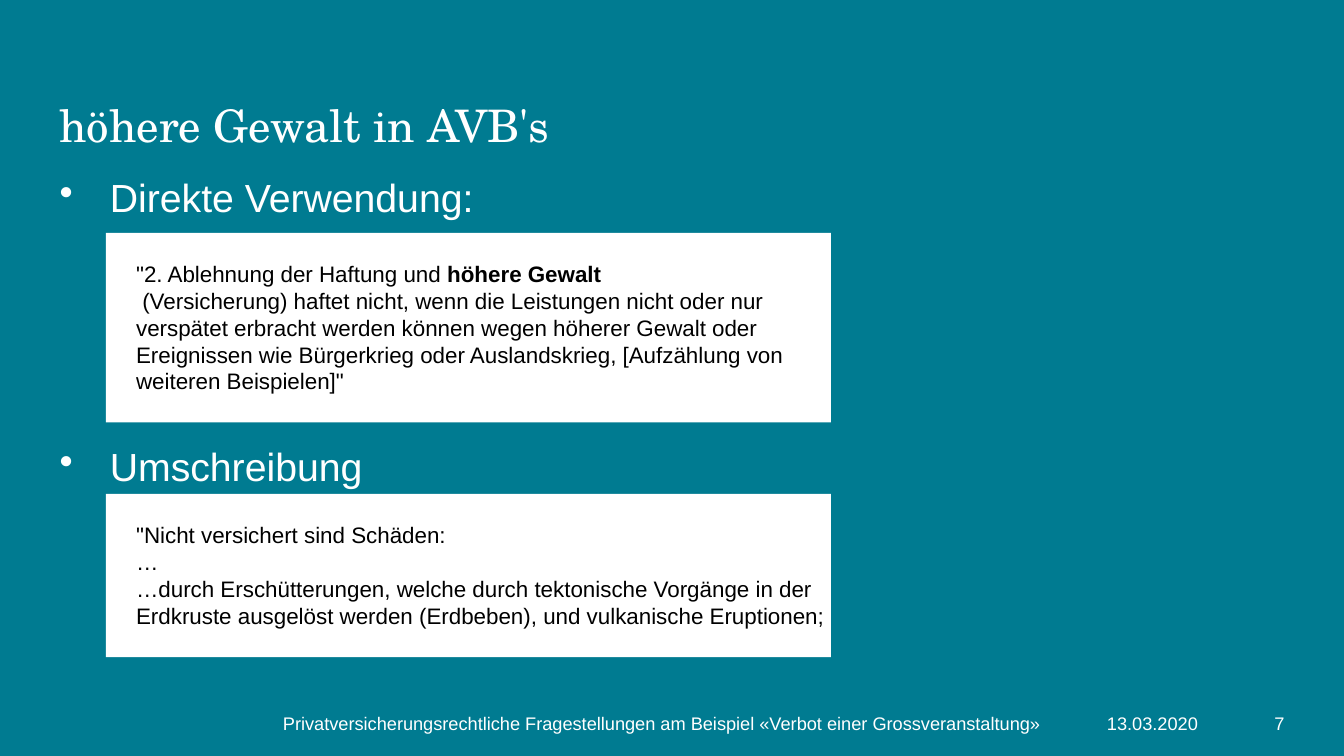
from lxml import etree
from pptx import Presentation
from pptx import util as u
from pptx.dml.color import RGBColor
from pptx.enum import shapes, text
from pptx.oxml import ns

TEAL = RGBColor(0x00, 0x7B, 0x91)
WHITE = RGBColor(0xFF, 0xFF, 0xFF)
BLACK = RGBColor(0x00, 0x00, 0x00)

LEFT = 0.59
WIDTH = 9.72
FOOTER = [
    (LEFT, WIDTH, "Privatversicherungsrechtliche Fragestellungen am Beispiel "
                  "«Verbot einer Grossveranstaltung»"),
    (10.52, 1.36, "13.03.2020"),
    (12.1, 0.64, "7"),
]
DIRECT_CLAUSE = [
    [("\"2. Ablehnung der Haftung und ", False), ("höhere Gewalt", True)],
    [(" (Versicherung) haftet nicht, wenn die Leistungen nicht oder nur verspätet "
      "erbracht werden können wegen höherer Gewalt oder Ereignissen wie Bürgerkrieg "
      "oder Auslandskrieg, [Aufzählung von weiteren Beispielen]\"", False)],
]
PARAPHRASED_CLAUSE = [
    [("\"Nicht versichert sind Schäden:", False)],
    [("…", False)],
    [("…durch Erschütterungen, welche durch tektonische Vorgänge in der Erdkruste "
      "ausgelöst werden (Erdbeben), und vulkanische Eruptionen;", False)],
]


def apply(target, values):
    for name, value in values.items():
        setattr(target, name, value)


def prepare_frame(shape, **values):
    frame = shape.text_frame
    apply(frame, {"word_wrap": True, "margin_left": 0, "margin_top": 0,
                  "margin_right": 0, "margin_bottom": 0,
                  "vertical_anchor": text.MSO_ANCHOR.TOP, **values})
    return frame


def add_frame(page, left, top, width, height, **values):
    box = page.shapes.add_textbox(*map(u.Inches, (left, top, width, height)))
    return prepare_frame(box, **values)


def add_paragraph(frame, first, **values):
    para = frame.paragraphs[0] if first else frame.add_paragraph()
    apply(para, values)
    return para


def add_span(para, words, size, color, name="Arial", bold=False):
    span = para.add_run()
    span.text = words
    apply(span.font, {"size": u.Pt(size), "name": name, "bold": bold})
    span.font.color.rgb = color


def add_title(page, words):
    frame = add_frame(page, LEFT, 0.45, WIDTH, 0.94)
    para = add_paragraph(frame, True, line_spacing=u.Pt(76))
    add_span(para, words, 32, WHITE, "TeX Gyre Schola")


def add_bullets(page, items, gap):
    frame = add_frame(page, LEFT, 1.66, WIDTH, 3.78)
    for index, words in enumerate(items):
        para = add_paragraph(frame, index == 0, line_spacing=1.13,
                             space_before=u.Pt(gap if index else 0))
        properties = para._p.get_or_add_pPr()
        properties.set("marL", str(u.Inches(0.5)))
        properties.set("indent", str(u.Inches(-0.5)))
        bullet = etree.SubElement(properties, ns.qn("a:buChar"))
        bullet.set("char", "•")
        add_span(para, words, 28, WHITE)


def add_clause(page, top, height, paragraphs):
    panel = page.shapes.add_shape(shapes.MSO_SHAPE.RECTANGLE,
                                  *map(u.Inches, (1.05, top, 7.19, height)))
    panel.shadow.inherit = False
    panel.fill.solid()
    panel.fill.fore_color.rgb = WHITE
    panel.line.fill.background()
    frame = prepare_frame(panel, margin_left=u.Inches(0.3), margin_top=u.Inches(0.27))
    for index, spans in enumerate(paragraphs):
        para = add_paragraph(frame, index == 0, alignment=text.PP_ALIGN.LEFT)
        for words, bold in spans:
            add_span(para, words, 16, BLACK, bold=bold)


def add_footer(page, left, width, words):
    frame = add_frame(page, left, 7.09, width, 0.18,
                      vertical_anchor=text.MSO_ANCHOR.MIDDLE)
    para = add_paragraph(frame, True, alignment=text.PP_ALIGN.RIGHT,
                         line_spacing=u.Pt(15))
    add_span(para, words, 13, WHITE)


def main():
    deck = Presentation()
    apply(deck, {"slide_width": u.Inches(13.33), "slide_height": u.Inches(7.5)})
    page = deck.slides.add_slide(deck.slide_layouts[6])
    page.background.fill.solid()
    page.background.fill.fore_color.rgb = TEAL
    add_title(page, "höhere Gewalt in AVB's")
    add_bullets(page, ["Direkte Verwendung:", "Umschreibung"], 154)
    add_clause(page, 2.31, 1.88, DIRECT_CLAUSE)
    add_clause(page, 4.9, 1.62, PARAPHRASED_CLAUSE)
    for left, width, words in FOOTER:
        add_footer(page, left, width, words)
    deck.save("out.pptx")


if __name__ == "__main__":
    main()
